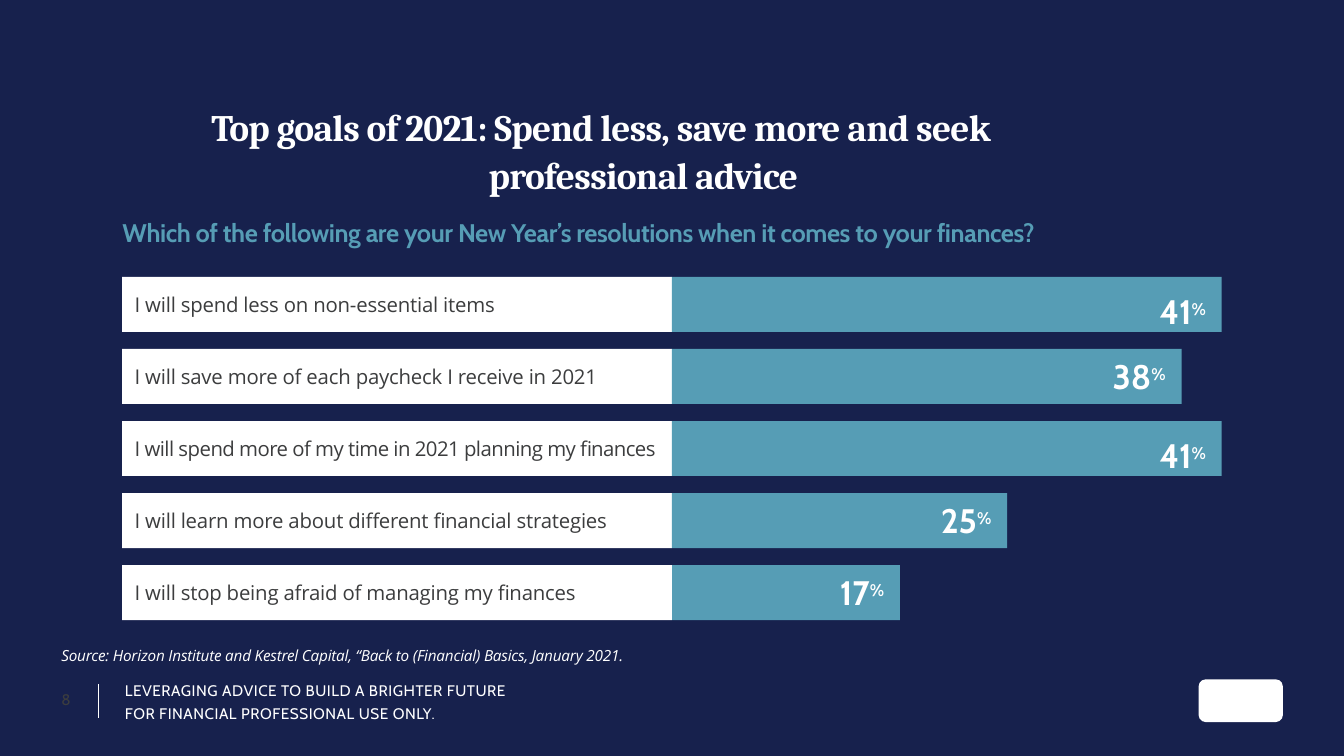
from typing import NamedTuple

from lxml import etree
from pptx import Presentation
from pptx.dml.color import RGBColor
from pptx.enum import shapes, text
from pptx.oxml.ns import qn
from pptx.util import Pt

NAVY, TEAL, WHITE, GREY = "17214D", "569DB5", "FFFFFF", "3C3D3E"
LEFT, TOP, STEP, BAR_HEIGHT = 72, 163.2, 42.45, 32.4
LABEL_WIDTH, POINTS_PER_PERCENT = 324, 324 / 41
ALIGN = text.PP_ALIGN


class Goal(NamedTuple):
    label: str
    percent: int
    value_inset: float
    spacing: float


class Box(NamedTuple):
    left: float
    top: float
    width: float
    height: float


class Style(NamedTuple):
    size: float
    name: str
    color: str
    bold: bool = False
    italic: bool = False
    spacing: float = 0
    baseline: int = 0


GOALS = [
    Goal("I will spend less on non-essential items", 41, 7.8, -0.1),
    Goal("I will save more of each paycheck I receive in 2021", 38, 3.9, -0.1),
    Goal("I will spend more of my time in 2021 planning my finances", 41, 7.8, -0.3),
    Goal("I will learn more about different financial strategies", 25, 3.9, -0.1),
    Goal("I will stop being afraid of managing my finances", 17, 3.9, -0.1),
]
VALUE = Style(20, "Cabin", WHITE, bold=True)
PERCENT_SIGN = Style(17.2, "Cabin", WHITE, bold=True, spacing=0.2, baseline=31000)


def rgb(color: str) -> RGBColor:
    return RGBColor.from_string(color)


def points(box: Box) -> list:
    return [Pt(v) for v in box]


def format_frame(tf, left: float = 0, top: float = 0, right: float = 0) -> None:
    settings = {
        "margin_left": Pt(left), "margin_top": Pt(top),
        "margin_right": Pt(right), "margin_bottom": 0,
        "word_wrap": True, "auto_size": text.MSO_AUTO_SIZE.NONE,
        "vertical_anchor": text.MSO_ANCHOR.TOP,
    }
    for key, value in settings.items():
        setattr(tf, key, value)


def add_run(p, words: str, style: Style) -> None:
    r = p.add_run()
    r.text = words
    settings = {"size": Pt(style.size), "name": style.name,
                "bold": style.bold, "italic": style.italic}
    for key, value in settings.items():
        setattr(r.font, key, value)
    r.font.color.rgb = rgb(style.color)
    properties = r._r.get_or_add_rPr()
    for key, number in {"spc": round(style.spacing * 100), "baseline": style.baseline}.items():
        if number:
            properties.set(key, str(number))


def add_block(slide, box: Box, color: str, kind=shapes.MSO_SHAPE.RECTANGLE):
    sp = slide.shapes.add_shape(kind, *points(box))
    sp.shadow.inherit = False
    sp.fill.solid()
    sp.fill.fore_color.rgb = rgb(color)
    sp.line.fill.background()
    return sp


def add_text(slide, box: Box, lines: list[str], style: Style, top: float = 0.7):
    tf = slide.shapes.add_textbox(*points(box)).text_frame
    format_frame(tf, left=0.9, top=top)
    for i, line in enumerate(lines):
        p = tf.paragraphs[0] if i == 0 else tf.add_paragraph()
        add_run(p, line, style)
    return tf


def add_goal(slide, goal: Goal, top: float) -> None:
    """Draw a label cell and the bar whose length shows its percentage."""
    label = add_block(slide, Box(LEFT, top, LABEL_WIDTH, BAR_HEIGHT), WHITE)
    format_frame(label.text_frame, left=7.4, top=8.8)
    p = label.text_frame.paragraphs[0]
    p.alignment = ALIGN.LEFT
    add_run(p, goal.label, Style(12, "Open Sans", GREY, spacing=goal.spacing))

    width = goal.percent * POINTS_PER_PERCENT
    bar = add_block(slide, Box(LEFT + LABEL_WIDTH, top, width, BAR_HEIGHT), TEAL)
    format_frame(bar.text_frame, top=goal.value_inset, right=9.4)
    p = bar.text_frame.paragraphs[0]
    p.alignment = ALIGN.RIGHT
    add_run(p, str(goal.percent), VALUE)
    add_run(p, "%", PERCENT_SIGN)


def add_title(slide) -> None:
    title = slide.shapes.title
    title.left, title.top, title.width, title.height = points(Box(80.6, 59, 630.7, 58.3))
    format_frame(title.text_frame, top=0.9, right=36)
    p = title.text_frame.paragraphs[0]
    p.alignment, p.line_spacing = ALIGN.LEFT, 1.06
    properties = p._p.get_or_add_pPr()
    properties.set("marL", str(Pt(207.4)))
    properties.set("indent", str(Pt(-163.4)))
    add_run(p, "Top goals of 2021: Spend less, save more and seek professional advice",
            Style(22, "Cambria", WHITE, bold=True, spacing=-0.4))


def add_footer(slide) -> None:
    add_text(slide, Box(35.3, 380.2, 364.3, 12.2),
             ["Source: Horizon Institute and Kestrel Capital, “Back to (Financial) Basics, January 2021."],
             Style(9, "Open Sans", WHITE, italic=True, spacing=-0.1))
    add_text(slide, Box(35.3, 406, 14, 14), ["8"], Style(9, "Cabin", GREY))
    divider = slide.shapes.add_connector(
        shapes.MSO_CONNECTOR.STRAIGHT, *points(Box(57.8, 403, 57.8, 423)))
    divider.line.color.rgb = rgb(WHITE)
    divider.line.width = Pt(0.4)
    etree.SubElement(divider._element.spPr, qn("a:effectLst"))
    tf = add_text(slide, Box(72.7, 399.6, 234, 26),
                  ["LEVERAGING ADVICE TO BUILD A BRIGHTER FUTURE",
                   "FOR FINANCIAL PROFESSIONAL USE ONLY."],
                  Style(9, "Cabin", WHITE, spacing=0.3), top=0)
    for p in tf.paragraphs:
        p.line_spacing, p.space_before = Pt(12.9), Pt(0.3)
    add_block(slide, Box(706.3, 400.3, 49.7, 25.2), WHITE,
              shapes.MSO_SHAPE.ROUNDED_RECTANGLE)


def main() -> None:
    prs = Presentation()
    prs.slide_width, prs.slide_height = Pt(792), Pt(445.5)
    slide = prs.slides.add_slide(prs.slide_layouts[5])
    slide.background.fill.solid()
    slide.background.fill.fore_color.rgb = rgb(NAVY)

    add_title(slide)
    add_text(slide, Box(71.3, 127.4, 657.4, 20.2),
             ["Which of the following are your New Year’s resolutions when it comes to your finances?"],
             Style(15, "Cabin", TEAL, bold=True, spacing=-0.25))
    for row, goal in enumerate(GOALS):
        add_goal(slide, goal, TOP + row * STEP)
    add_footer(slide)
    prs.save("out.pptx")


if __name__ == "__main__":
    main()
